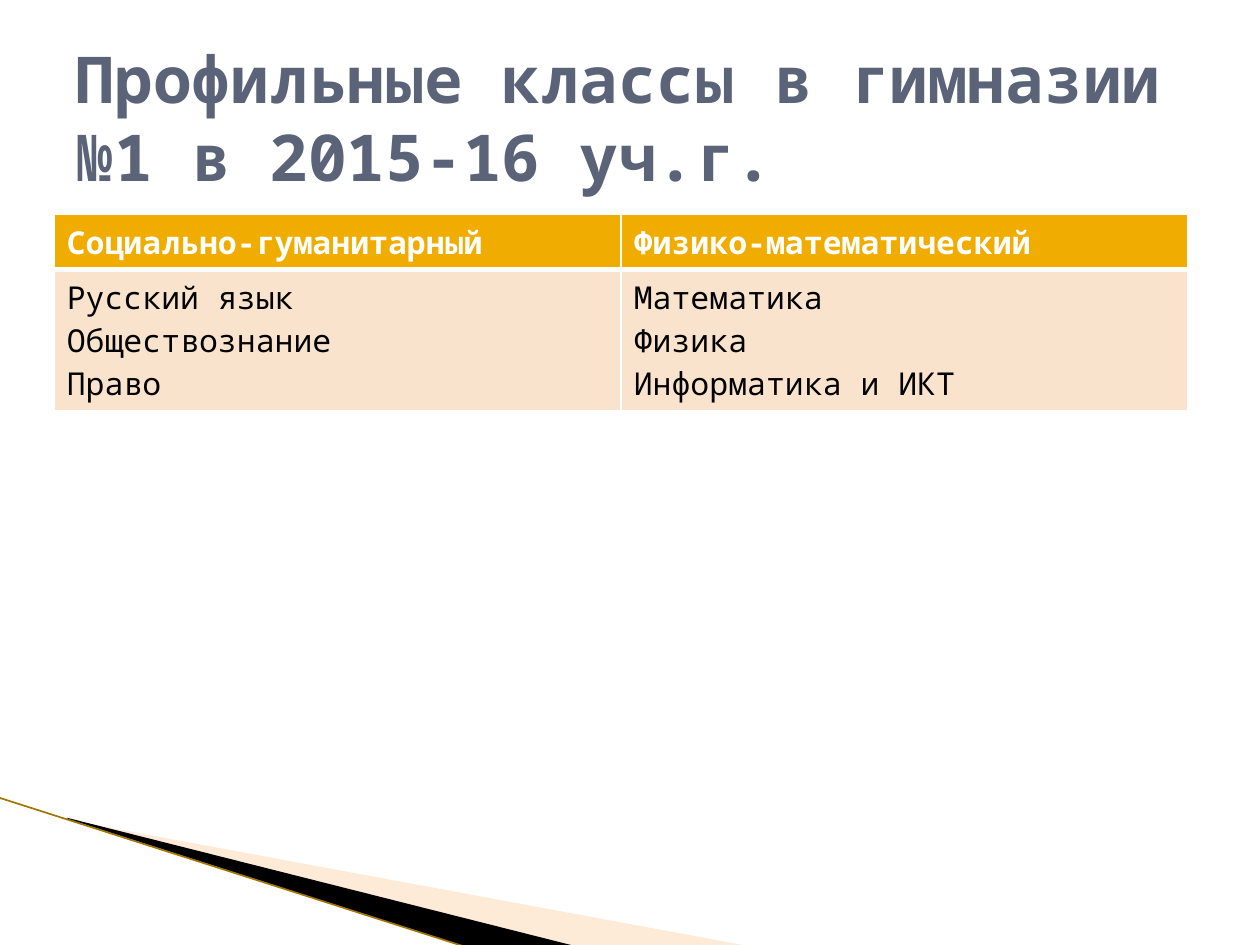
from dataclasses import dataclass

from lxml.etree import SubElement
from pptx import Presentation
from pptx.dml.color import RGBColor
from pptx.enum.text import MSO_ANCHOR, PP_ALIGN
from pptx.enum.shapes import MSO_CONNECTOR
from pptx.oxml import parse_xml
from pptx.oxml.ns import nsdecls, qn
from pptx.util import Inches, Pt


@dataclass(frozen=True)
class Theme:
    font: str = "Noto Sans Mono"
    title_size: float = 36.9
    table_size: int = 18
    title: str = "5A6378"
    header_fill: str = "F0AD00"
    body_fill: str = "F9E3CC"
    white: str = "FFFFFF"
    black: str = "000000"
    pale_wedge: str = "FCCF9B"
    edge: str = "A07400"


THEME = Theme()
TITLE = "Профильные классы в гимназии №1 в 2015-16 уч.г."
PROFILES = [
    ("Социально-гуманитарный", ["Русский язык", "Обществознание", "Право"]),
    ("Физико-математический", ["Математика", "Физика", "Информатика и ИКТ"]),
]
WEDGES = [
    ([(0.55, 6.51), (5.95, 7.51), (4.56, 7.51), (0.55, 6.5)], THEME.pale_wedge, 40),
    ([(0.53, 6.49), (4.57, 7.51), (3.72, 7.52), (0.54, 6.5)], THEME.black, 100),
]
EDGE = (-0.01, 6.33, 3.71, 7.52)
TABLE_LEFT, TABLE_TOP, COLUMN_WIDTH = 0.43, 1.7, 4.5
ROW_HEIGHTS = (0.41, 1)


def style_font(font, size, color, bold):
    """Apply the slide typeface with a size, colour and weight."""
    font.name, font.size, font.bold = THEME.font, Pt(size), bold
    font.color.rgb = RGBColor.from_string(color)


def add_wedge(slide, points, color, opacity):
    """Draw one filled decorative wedge."""
    corners = [(Inches(x), Inches(y)) for x, y in points]
    builder = slide.shapes.build_freeform(*corners[0])
    builder.add_line_segments(corners[1:], close=True)
    wedge = builder.convert_to_shape()
    wedge.shadow.inherit = False
    wedge.line.fill.background()
    wedge.fill.solid()
    wedge.fill.fore_color.rgb = RGBColor.from_string(color)
    if opacity < 100:
        fill_color = wedge.fill._xPr.find(f"{qn('a:solidFill')}/{qn('a:srgbClr')}")
        SubElement(fill_color, qn("a:alpha"), val=str(opacity * 1000))


def add_edge(slide):
    """Draw the thin line along the wedges."""
    edge = slide.shapes.add_connector(MSO_CONNECTOR.STRAIGHT, *map(Inches, EDGE))
    edge.line.width = Pt(0.95)
    edge.line.color.rgb = RGBColor.from_string(THEME.edge)
    SubElement(edge._element.spPr, qn("a:effectLst"))


def fill_cell(cell, lines, fill, color, bold, borders):
    """Write the lines in a cell and set its fill and borders."""
    cell.text = "\n".join(lines)
    for paragraph in cell.text_frame.paragraphs:
        style_font(paragraph.font, THEME.table_size, color, bold)
    cell.fill.solid()
    cell.fill.fore_color.rgb = RGBColor.from_string(fill)
    properties = cell._tc.get_or_add_tcPr()
    for index, (side, width) in enumerate(borders.items()):
        properties.insert(index, parse_xml(
            f'<a:ln{side} {nsdecls("a")} w="{Pt(width)}"><a:solidFill>'
            f'<a:srgbClr val="{THEME.white}"/></a:solidFill></a:ln{side}>'))


def add_profiles(slide):
    """Add the table with one column for each profile."""
    table = slide.shapes.add_table(
        len(ROW_HEIGHTS), len(PROFILES), Inches(TABLE_LEFT), Inches(TABLE_TOP),
        Inches(COLUMN_WIDTH * len(PROFILES)), Inches(sum(ROW_HEIGHTS))).table
    for row, height in zip(table.rows, ROW_HEIGHTS):
        row.height = Inches(height)
    for column, (profile, subjects) in enumerate(PROFILES):
        fill_cell(table.cell(0, column), [profile], THEME.header_fill, THEME.white,
                  True, {"L": 1, "R": 1, "T": 1, "B": 3})
        fill_cell(table.cell(1, column), subjects, THEME.body_fill, THEME.black,
                  False, {"L": 1, "R": 1, "T": 3, "B": 1})


def set_title(slide):
    """Place and format the title placeholder."""
    title = slide.shapes.title
    title.left, title.top = Inches(0.5), Inches(0.3)
    title.width, title.height = Inches(9), Inches(1.25)
    title.text = TITLE
    title.text_frame.word_wrap = True
    title.text_frame.vertical_anchor = MSO_ANCHOR.MIDDLE
    paragraph = title.text_frame.paragraphs[0]
    paragraph.alignment = PP_ALIGN.LEFT
    style_font(paragraph.font, THEME.title_size, THEME.title, True)


def main():
    """Build and save the slide."""
    presentation = Presentation()
    presentation.slide_width, presentation.slide_height = Inches(10), Inches(7.5)
    slide = presentation.slides.add_slide(presentation.slide_layouts[5])
    for points, color, opacity in WEDGES:
        add_wedge(slide, points, color, opacity)
    add_edge(slide)
    add_profiles(slide)
    set_title(slide)
    presentation.save("out.pptx")


if __name__ == "__main__":
    main()
